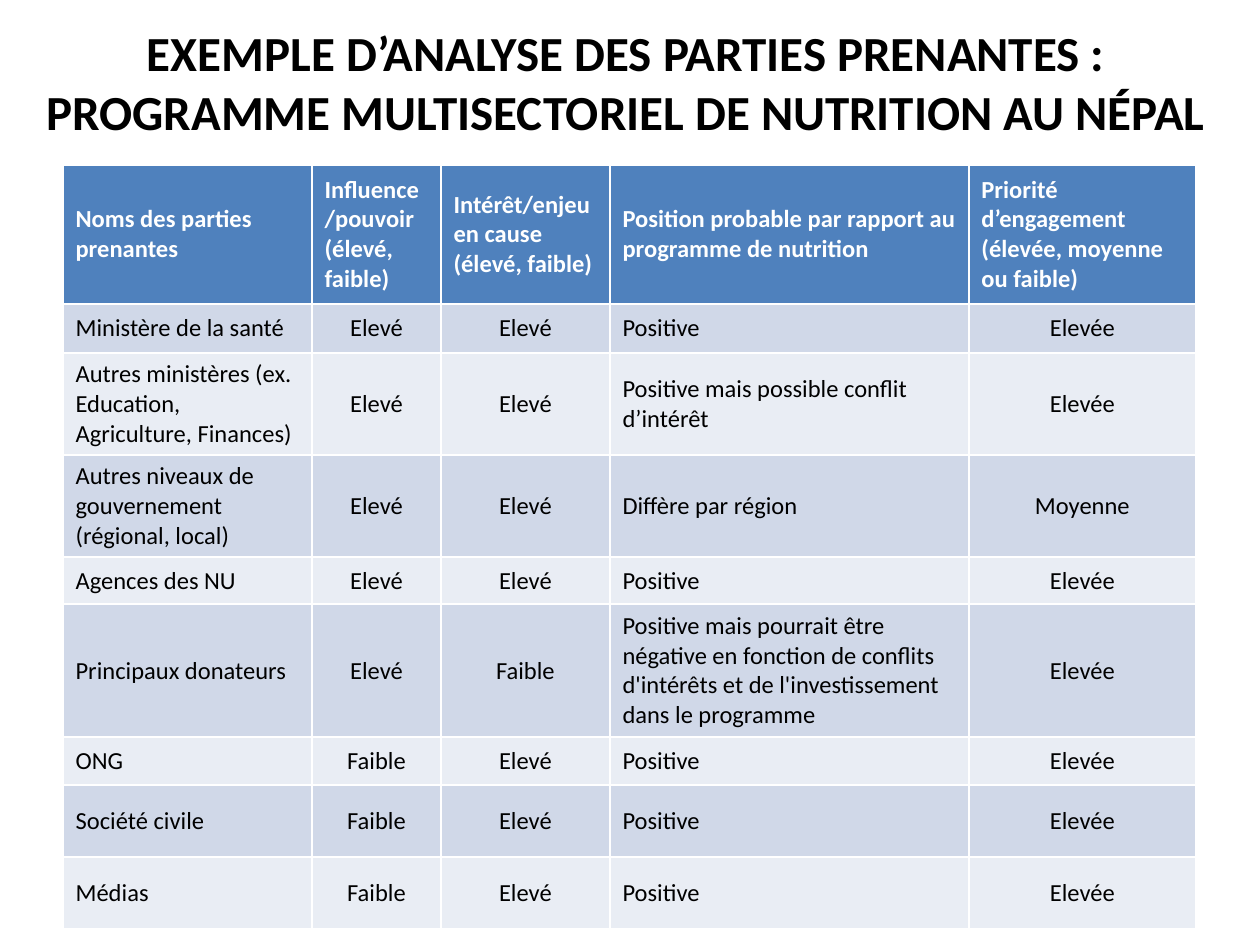
"""Build the stakeholder analysis slide for the Nepal nutrition programme."""
import pptx
import pptx.dml.color
import pptx.enum.text
import pptx.util

TITLE = "EXEMPLE D’ANALYSE DES PARTIES PRENANTES : PROGRAMME MULTISECTORIEL DE NUTRITION AU NÉPAL"
STAKEHOLDERS = [
    ("Noms des parties prenantes", "Influence/pouvoir\n(élevé, faible)",
     "Intérêt/enjeu en cause (élevé, faible)",
     "Position probable par rapport au programme de nutrition",
     "Priorité d’engagement (élevée, moyenne ou faible)"),
    ("Ministère de la santé", "Elevé", "Elevé", "Positive", "Elevée"),
    ("Autres ministères (ex. Education, Agriculture, Finances)", "Elevé", "Elevé",
     "Positive mais possible conflit d’intérêt", "Elevée"),
    ("Autres niveaux de gouvernement (régional, local)", "Elevé", "Elevé",
     "Diffère par région", "Moyenne"),
    ("Agences des NU", "Elevé", "Elevé", "Positive", "Elevée"),
    ("Principaux donateurs", "Elevé", "Faible",
     "Positive mais pourrait être négative en fonction de conflits d'intérêts "
     "et de l'investissement dans le programme", "Elevée"),
    ("ONG", "Faible", "Elevé", "Positive", "Elevée"),
    ("Société civile", "Faible", "Elevé", "Positive", "Elevée"),
    ("Médias", "Faible", "Elevé", "Positive", "Elevée"),
]
COLUMN_WIDTHS = [249, 129, 169, 359, 227]
ROW_HEIGHTS = [139, 49, 102, 102, 47, 133, 48, 72, 72]
RATING_COLUMNS = {1, 2, 4}
HEADER_FILL = "4F81BD"
BAND_FILLS = ["E9EDF4", "D0D8E8"]
ALIGN = pptx.enum.text.PP_ALIGN
MIDDLE = pptx.enum.text.MSO_ANCHOR.MIDDLE


def px(length):
    return pptx.util.Emu(round(length * 914400 / 126))


def color(code):
    return pptx.dml.color.RGBColor.from_string(code)


def format_text(frame, size, code, bold, align):
    for paragraph in frame.paragraphs:
        paragraph.alignment = align
        for run in paragraph.runs:
            run.font.name = "Calibri"
            run.font.size = pptx.util.Pt(size)
            run.font.bold = bold
            run.font.color.rgb = color(code)


def add_title(slide):
    title = slide.shapes.title
    title.left, title.top, title.width, title.height = px(25), px(17), px(1201), px(128)
    title.text_frame.text = TITLE
    title.text_frame.vertical_anchor = MIDDLE
    format_text(title.text_frame, 28, "000000", True, ALIGN.CENTER)


def add_stakeholders(slide):
    table = slide.shapes.add_table(
        len(ROW_HEIGHTS), len(COLUMN_WIDTHS), px(63), px(165),
        px(sum(COLUMN_WIDTHS)), px(sum(ROW_HEIGHTS))).table
    for column, width in zip(table.columns, COLUMN_WIDTHS):
        column.width = px(width)
    for row, height in zip(table.rows, ROW_HEIGHTS):
        row.height = px(height)
    for r, entries in enumerate(STAKEHOLDERS):
        header = r == 0
        for c, entry in enumerate(entries):
            cell = table.cell(r, c)
            cell.text_frame.text = entry
            cell.vertical_anchor = MIDDLE
            cell.fill.solid()
            cell.fill.fore_color.rgb = color(HEADER_FILL if header else BAND_FILLS[r % 2])
            centred = not header and c in RATING_COLUMNS
            format_text(cell.text_frame, 14, "FFFFFF" if header else "000000", header,
                        ALIGN.CENTER if centred else ALIGN.LEFT)


def main():
    deck = pptx.Presentation()
    deck.slide_width, deck.slide_height = px(1260), px(945)
    slide = deck.slides.add_slide(deck.slide_layouts[5])
    add_title(slide)
    add_stakeholders(slide)
    deck.save("out.pptx")


if __name__ == "__main__":
    main()
